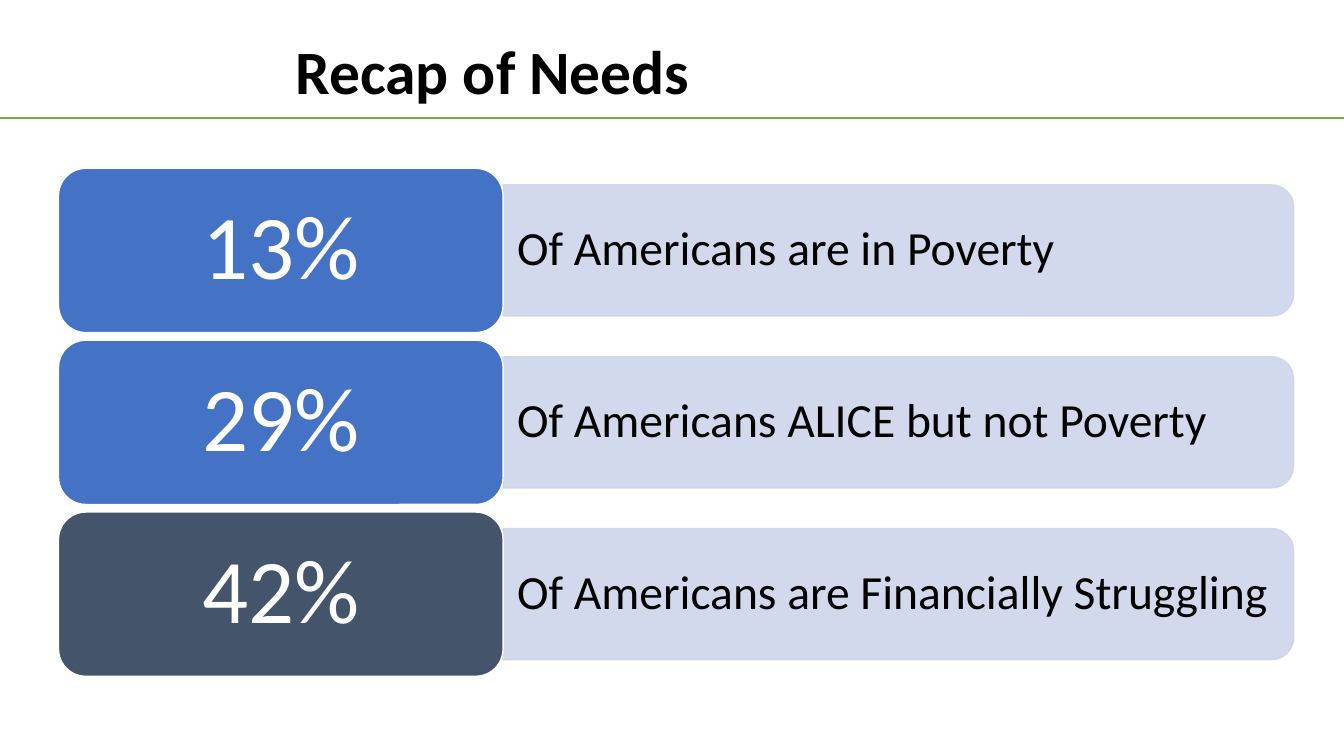
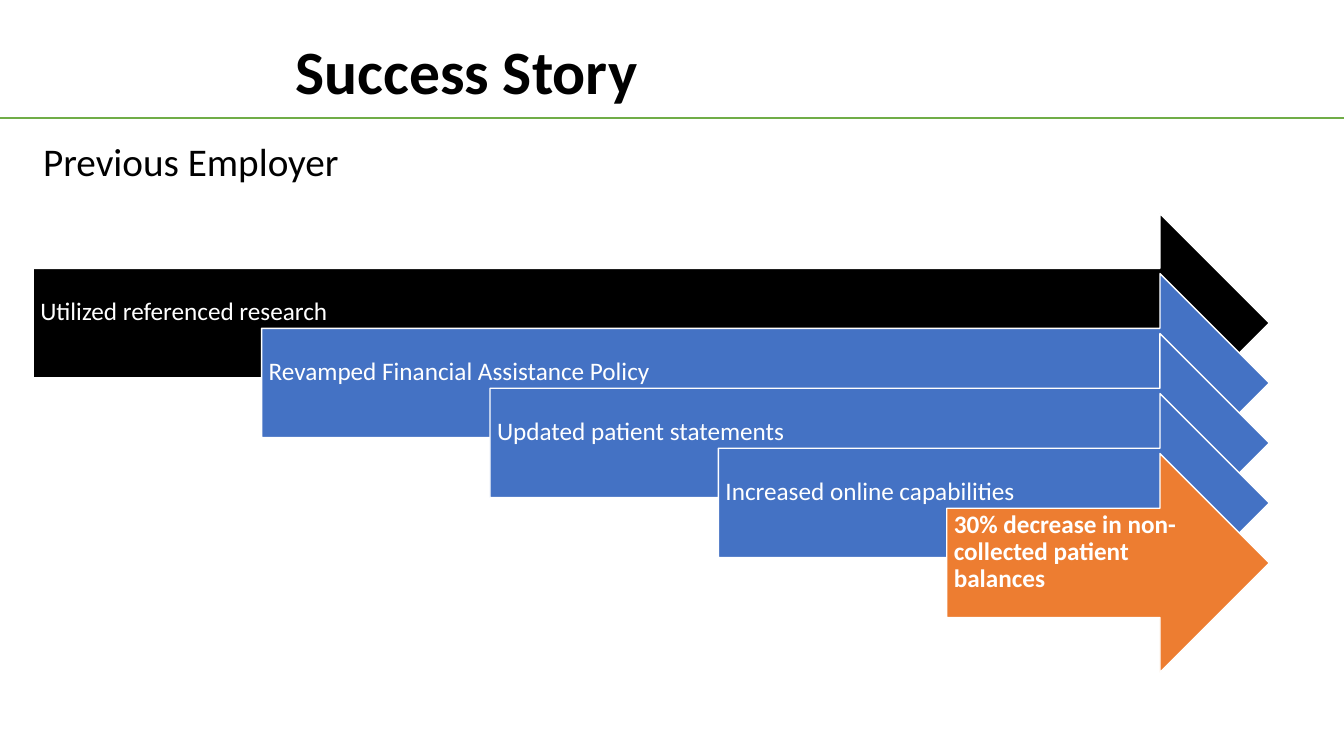
from lxml import etree
from pptx import Presentation
from pptx import util as u
from pptx.dml.color import RGBColor
from pptx.enum import shapes, text
from pptx.oxml.ns import qn

BLACK, WHITE, GREEN = "000000", "FFFFFF", "70AD47"
BLUE, SLATE, ORANGE, PALE = "4472C4", "44546A", "ED7D31", "CFD5EA"
WIDTH, HEIGHT = 13.33, 7.5
RULE_TOP = 1.17
TITLE_BOX = {"left": 2.83, "top": 0.36, "width": 10.33, "height": 0.68}


def paint(fmt, color):
    """Give a fill or font-like format one solid hex colour."""
    if hasattr(fmt, "solid"):
        fmt.solid()
        fmt = fmt.fore_color
    else:
        fmt = fmt.color
    fmt.rgb = RGBColor.from_string(color)


def write(shape, words, size, color, bold=False, insets=(0.1, 0.05, 0.1, 0.05),
          align=text.PP_ALIGN.LEFT, anchor=text.MSO_ANCHOR.MIDDLE):
    frame = shape.text_frame
    frame.text = words
    frame.word_wrap = True
    frame.auto_size = text.MSO_AUTO_SIZE.NONE
    frame.vertical_anchor = anchor
    for side, inset in zip(("left", "top", "right", "bottom"), insets):
        setattr(frame, f"margin_{side}", u.Inches(inset))
    paragraph = frame.paragraphs[0]
    paragraph.alignment = align
    paragraph.line_spacing = 0.9
    style = {"name": "Calibri", "size": u.Pt(size), "bold": bold}
    for key, value in style.items():
        setattr(paragraph.font, key, value)
    paint(paragraph.font, color)


prs = Presentation()
prs.slide_width, prs.slide_height = u.Inches(WIDTH), u.Inches(HEIGHT)
title_only = prs.slide_layouts[5]

# Titles, and the rule that every slide takes from the layout
slides = [prs.slides.add_slide(title_only) for _ in range(2)]
for slide, heading in zip(slides, ("Recap of Needs", "Success Story")):
    title = slide.shapes.title
    for side, length in TITLE_BOX.items():
        setattr(title, side, u.Inches(length))
    write(title, heading, 44, BLACK, bold=True, anchor=text.MSO_ANCHOR.TOP)

needs, story = slides
rule = needs.shapes.add_connector(
    shapes.MSO_CONNECTOR.STRAIGHT, 0, u.Inches(RULE_TOP), prs.slide_width, u.Inches(RULE_TOP))
paint(rule.line, GREEN)
rule.line.width = u.Pt(1.25)
etree.SubElement(rule.element.spPr, qn("a:effectLst"))
title_only.shapes.element.append(rule.element)

# Recap of Needs: one row per share of Americans
ROW_TOP, ROW_STEP, ROW_HEIGHT = 1.67, 1.705, 1.63
SHARE_LEFT, SHARE_WIDTH = 0.58, 4.41
BAR_LEFT, BAR_WIDTH, BAR_HEIGHT = SHARE_LEFT + SHARE_WIDTH, 7.84, 1.3
ROWS = [
    ("13%", "Of Americans are in Poverty", BLUE),
    ("29%", "Of Americans ALICE but not Poverty", BLUE),
    ("42%", "Of Americans are Financially Struggling", SLATE),
]
for row, (share, meaning, color) in enumerate(ROWS):
    top = ROW_TOP + row * ROW_STEP
    middle = top + ROW_HEIGHT / 2

    # The bar stands upright before it is turned, so its sides swap
    bar = needs.shapes.add_shape(
        shapes.MSO_SHAPE.ROUND_2_SAME_RECTANGLE,
        u.Inches(BAR_LEFT + (BAR_WIDTH - BAR_HEIGHT) / 2), u.Inches(middle - BAR_WIDTH / 2),
        u.Inches(BAR_HEIGHT), u.Inches(BAR_WIDTH))
    bar.rotation = 90
    bar.shadow.inherit = False
    paint(bar.fill, PALE)
    paint(bar.line, PALE)
    bar.line.width = u.Pt(1)
    for tint in bar.element.spPr.iter(qn("a:srgbClr")):
        etree.SubElement(tint, qn("a:alpha"), val="90000")

    label = needs.shapes.add_textbox(
        u.Inches(BAR_LEFT), u.Inches(middle - BAR_HEIGHT / 2),
        u.Inches(BAR_WIDTH), u.Inches(BAR_HEIGHT))
    write(label, meaning, 34, BLACK, insets=(0.14, 0.07, 0.14, 0.07))

    block = needs.shapes.add_shape(
        shapes.MSO_SHAPE.ROUNDED_RECTANGLE, u.Inches(SHARE_LEFT), u.Inches(top),
        u.Inches(SHARE_WIDTH), u.Inches(ROW_HEIGHT))
    block.shadow.inherit = False
    paint(block.fill, color)
    paint(block.line, WHITE)
    block.line.width = u.Pt(1)
    write(block, share, 65, WHITE, align=text.PP_ALIGN.CENTER)

# Success Story: arrows that start later and lower but share one tip line
STEP_LEFT, STEP_TOP, STEP_RIGHT, STEP_HEIGHT = 0.33, 2.12, 12.59, 2.17
STEP_ACROSS, STEP_DOWN = 2.265, 0.595
STEPS = [
    ("Utilized referenced research", BLACK),
    ("Revamped Financial Assistance Policy", BLUE),
    ("Updated patient statements", BLUE),
    ("Increased online capabilities", BLUE),
    ("30% decrease in non-collected patient balances", ORANGE),
]
employer = story.shapes.add_textbox(
    u.Inches(STEP_LEFT), u.Inches(1.37), u.Inches(11.5), u.Inches(1.13))
write(employer, "Previous Employer", 28, BLACK, anchor=text.MSO_ANCHOR.TOP)

for step, (action, color) in enumerate(STEPS):
    left = STEP_LEFT + step * STEP_ACROSS
    arrow = story.shapes.add_shape(
        shapes.MSO_SHAPE.RIGHT_ARROW, u.Inches(left), u.Inches(STEP_TOP + step * STEP_DOWN),
        u.Inches(STEP_RIGHT - left), u.Inches(STEP_HEIGHT))
    arrow.shadow.inherit = False
    paint(arrow.fill, color)
    paint(arrow.line, WHITE)
    arrow.line.width = u.Pt(1)
    write(arrow, action, 18, WHITE, bold=color == ORANGE, insets=(0.07, 0.07, 0.28, 0.28))

prs.save("out.pptx")
